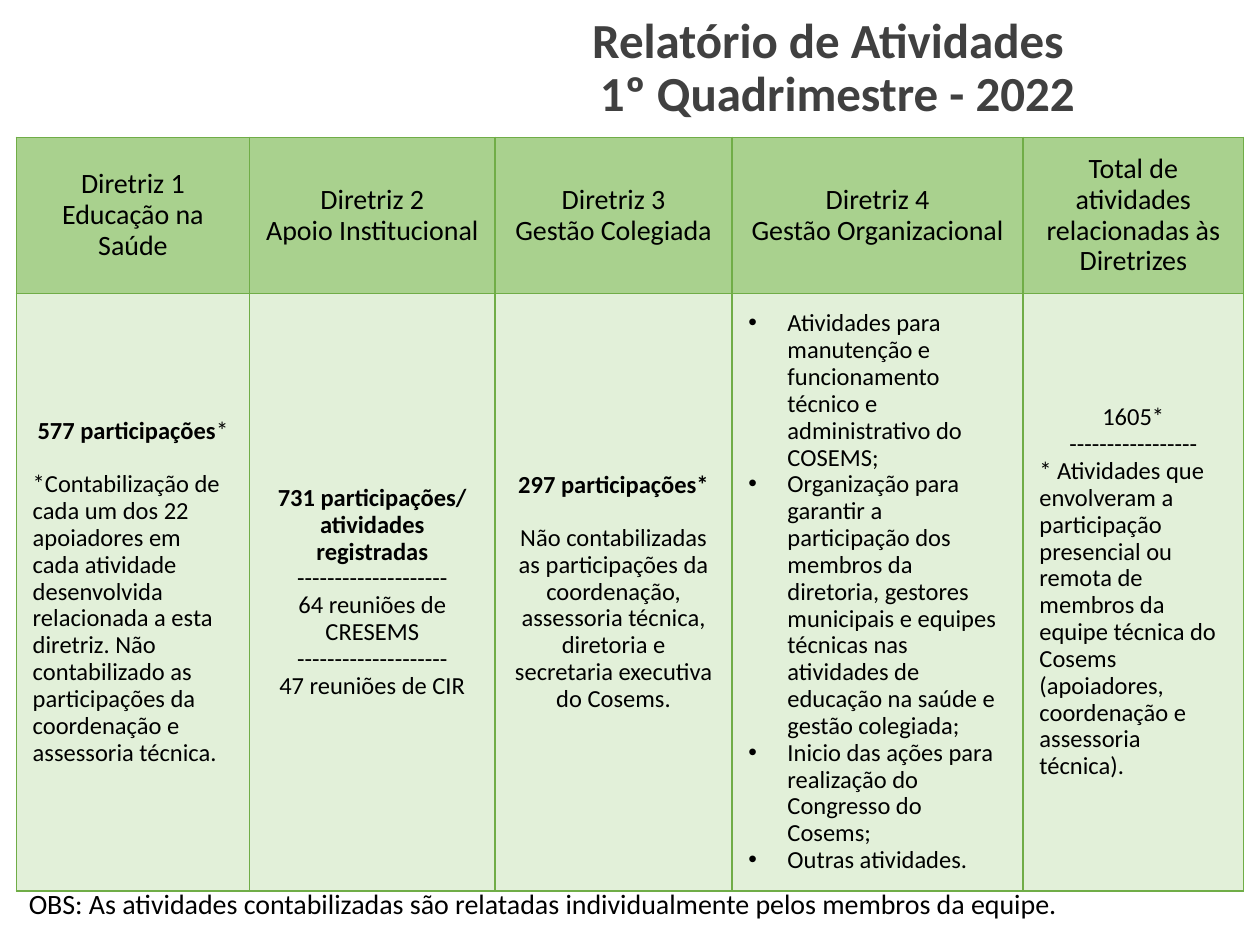
from dataclasses import dataclass

from lxml.etree import SubElement
from pptx import Presentation
from pptx.dml.color import RGBColor
from pptx.enum.text import MSO_ANCHOR, PP_ALIGN as Align
from pptx.oxml.ns import qn
from pptx.util import Inches, Pt


@dataclass(frozen=True)
class Theme:
    font: str = "Calibri"
    title_color: str = "404040"
    text_color: str = "000000"
    header_fill: str = "A9D18E"
    body_fill: str = "E2F0D9"
    border_color: str = "70AD47"
    title_size: int = 28
    header_size: int = 16
    body_size: int = 14
    note_size: int = 16
    border_width: float = 1
    line_spacing: float = 0.9
    paragraph_gap: float = 15.2
    padding: float = 0.13
    bullet_indent: float = 0.31


@dataclass(frozen=True)
class Line:
    """One paragraph, given as (text, bold) runs."""
    runs: tuple
    align: Align = Align.LEFT
    gap: bool = False
    bullet: bool = False


def plain(text, align=Align.LEFT, **options):
    return Line(((text, False),), align, **options)


def bold(text, align=Align.CENTER):
    return Line(((text, True),), align)


def centered(*texts):
    return [plain(text, Align.CENTER) for text in texts]


def bullets(*texts):
    return [plain(text, bullet=True) for text in texts]


class SlideBuilder:
    def __init__(self, slide, theme):
        self.slide = slide
        self.theme = theme

    def add_bullet(self, paragraph):
        properties = paragraph._p.get_or_add_pPr()
        indent = Inches(self.theme.bullet_indent)
        properties.set("marL", str(indent))
        properties.set("indent", str(-indent))
        color = SubElement(properties, qn("a:buClr"))
        SubElement(color, qn("a:srgbClr"), val=self.theme.text_color)
        SubElement(properties, qn("a:buFont"), typeface="Arial")
        SubElement(properties, qn("a:buChar"), char="•")

    def fill_text(self, frame, lines, size, color, spacing):
        for index, line in enumerate(lines):
            paragraph = frame.add_paragraph() if index else frame.paragraphs[0]
            if line.bullet:
                self.add_bullet(paragraph)
            paragraph.alignment = line.align
            paragraph.line_spacing = spacing
            if line.gap:
                paragraph.space_before = Pt(self.theme.paragraph_gap)
            for text, is_bold in line.runs:
                run = paragraph.add_run()
                run.text = text
                run.font.name = self.theme.font
                run.font.size = Pt(size)
                run.font.bold = is_bold
                run.font.color.rgb = RGBColor.from_string(color)

    def text_box(self, place, lines, size, color, spacing=1.0, padding=None):
        box = self.slide.shapes.add_textbox(*map(Inches, place))
        frame = box.text_frame
        frame.word_wrap = True
        if padding is not None:
            self.pad(frame, padding)
        self.fill_text(frame, lines, size, color, spacing)

    def pad(self, target, padding):
        margin = Inches(padding)
        target.margin_left = target.margin_right = margin
        target.margin_top = target.margin_bottom = margin

    def add_borders(self, cell):
        properties = cell._tc.get_or_add_tcPr()
        width = str(Pt(self.theme.border_width))
        for side in ("lnL", "lnR", "lnT", "lnB"):
            border = SubElement(properties, qn(f"a:{side}"), w=width)
            fill = SubElement(border, qn("a:solidFill"))
            SubElement(fill, qn("a:srgbClr"), val=self.theme.border_color)

    def table(self, left, top, widths, heights, rows):
        theme = self.theme
        place = map(Inches, (left, top, sum(widths), sum(heights)))
        table = self.slide.shapes.add_table(len(rows), len(widths), *place).table
        table.first_row = table.horz_banding = False
        for column, width in zip(table.columns, widths):
            column.width = Inches(width)
        for row, height in zip(table.rows, heights):
            row.height = Inches(height)
        styles = [(theme.header_fill, theme.header_size), (theme.body_fill, theme.body_size)]
        for row, contents, (fill, size) in zip(table.rows, rows, styles):
            for cell, lines in zip(row.cells, contents):
                self.add_borders(cell)
                cell.fill.solid()
                cell.fill.fore_color.rgb = RGBColor.from_string(fill)
                cell.vertical_anchor = MSO_ANCHOR.MIDDLE
                self.pad(cell, theme.padding)
                self.fill_text(cell.text_frame, lines, size, theme.text_color,
                               theme.line_spacing)


TITLE = [
    bold("Relatório de Atividades ", Align.RIGHT),
    bold("1º Quadrimestre - 2022", Align.RIGHT),
]
HEADERS = [
    centered("Diretriz 1", "Educação na Saúde"),
    centered("Diretriz 2", "Apoio Institucional"),
    centered("Diretriz 3", "Gestão Colegiada"),
    centered("Diretriz 4", "Gestão Organizacional"),
    centered("Total de atividades relacionadas às Diretrizes"),
]
DASHES = "-" * 20
RESULTS = [
    [
        Line((("577 participações", True), ("*", False)), Align.CENTER),
        plain("*Contabilização de cada um dos 22 apoiadores em cada atividade "
              "desenvolvida relacionada a esta diretriz. Não contabilizado as "
              "participações da coordenação e assessoria técnica.", gap=True),
    ],
    [
        bold("731 participações/ atividades registradas"),
        *centered(DASHES, "64 reuniões de CRESEMS", DASHES, "47 reuniões de CIR"),
    ],
    [
        bold("297 participações*"),
        plain("Não contabilizadas as participações da coordenação, assessoria "
              "técnica, diretoria e secretaria executiva do Cosems.",
              Align.CENTER, gap=True),
    ],
    bullets(
        "Atividades para manutenção e funcionamento técnico e administrativo do COSEMS;",
        "Organização para garantir a participação dos membros da diretoria, gestores "
        "municipais e equipes técnicas nas atividades de educação na saúde e gestão "
        "colegiada;",
        "Inicio das ações para realização do Congresso do Cosems;",
        "Outras atividades.",
    ),
    [
        *centered("1605*", "-" * 17),
        plain("* Atividades que envolveram a participação presencial ou remota de "
              "membros da equipe técnica do Cosems (apoiadores, coordenação e "
              "assessoria técnica)."),
    ],
]
NOTE = [plain("OBS: As atividades contabilizadas são relatadas individualmente "
              "pelos membros da equipe.")]


def main():
    presentation = Presentation()
    presentation.slide_width = Inches(10)
    presentation.slide_height = Inches(7.5)
    theme = Theme()
    slide = presentation.slides.add_slide(presentation.slide_layouts[6])
    builder = SlideBuilder(slide, theme)

    builder.text_box((2.73, 0, 5.93, 0.87), TITLE, theme.title_size,
                     theme.title_color, theme.line_spacing, theme.padding)
    builder.table(0.13, 1.09, widths=(1.85, 1.95, 1.88, 2.31, 1.75),
                  heights=(1.24, 4.74), rows=(HEADERS, RESULTS))
    builder.text_box((0.13, 6.99, 8.38, 0.37), NOTE, theme.note_size, theme.text_color)

    presentation.save("out.pptx")


if __name__ == "__main__":
    main()
